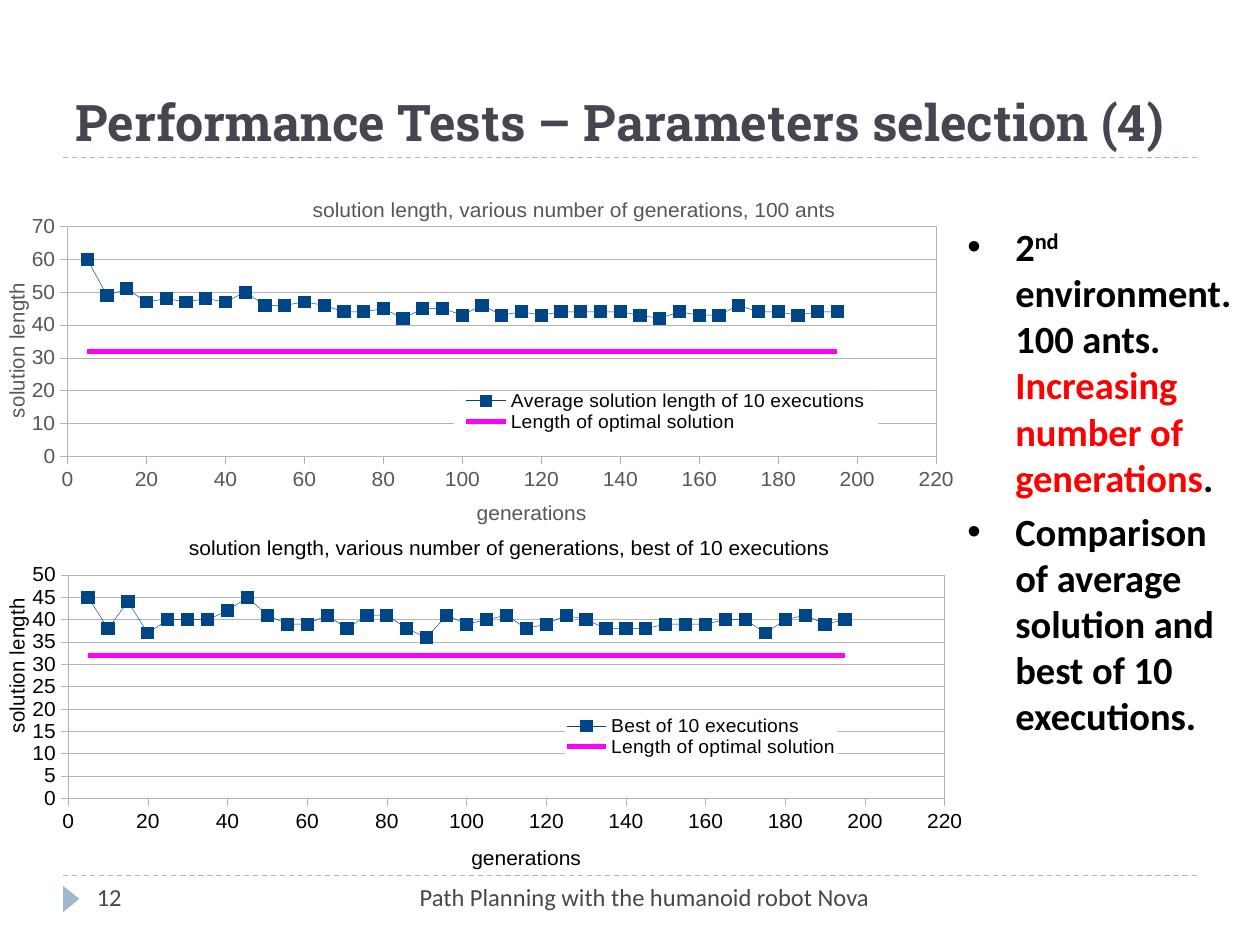
from lxml import etree
from pptx import Presentation
from pptx.chart.data import XyChartData
from pptx.dml.color import RGBColor
from pptx.enum.chart import XL_CHART_TYPE as ChartType, XL_LEGEND_POSITION as LegendSide
from pptx.enum.chart import XL_MARKER_STYLE as Marker, XL_TICK_MARK as Tick
from pptx.enum.dml import MSO_LINE_DASH_STYLE as Dash
from pptx.enum.shapes import MSO_CONNECTOR as Connector, MSO_SHAPE as Shape
from pptx.enum.text import MSO_ANCHOR as Anchor, PP_ALIGN as Align
from pptx.oxml import parse_xml
from pptx.oxml.ns import nsdecls, qn
from pptx.util import Pt

THEME = {
    "ink": "464653", "accent": "9FB8CD", "black": "000000", "red": "FF0000",
    "white": "FFFFFF", "grey": "575757", "grid": "B3B3B3",
    "data": "004586", "optimal": "FF00FF",
    "heading_font": "Roboto Slab", "body_font": "Calibri", "chart_font": "Arial",
    "heading": 28.8, "body": 22, "footer": 14, "axis": 12, "legend": 11,
}

TITLE = "Performance Tests – Parameters selection (4)"
FOOTER = "Path Planning with the humanoid robot Nova"
NUMBER = "12"
BULLETS = [
    [("2", {}), ("nd", {"raised": True}), (" environment.100 ants. ", {}),
     ("Increasing number of generations", {"color": "red"}), (".", {})],
    [("Comparison of average solution and best of 10 executions.", {})],
]

GENERATIONS = range(5, 200, 5)
OPTIMAL = 32
CHARTS = [
    {
        "title": "solution length, various number of generations, best of 10 executions",
        "series": "Best of 10 executions",
        "values": [45, 38, 44, 37, 40, 40, 40, 42, 45, 41, 39, 39, 41, 38, 41, 41, 38, 36, 41, 39,
                   40, 41, 38, 39, 41, 40, 38, 38, 38, 39, 39, 39, 40, 40, 37, 40, 41, 39, 40],
        "at": (0, 303.84, 556.56, 196.56), "color": "black", "top": 50, "step": 5,
        "plot": (0.07, 0.13, 0.9, 0.67), "legend": (0.58, 0.55, 0.28, 0.12),
        "title_at": (0.19, 0), "x_title_at": (0.48, 0.93), "y_title_at": (0, 0.2),
    },
    {
        "title": "solution length, various number of generations, 100 ants",
        "series": "Average solution length of 10 executions",
        "values": [60, 49, 51, 47, 48, 47, 48, 47, 50, 46, 46, 47, 46, 44, 44, 45, 42, 45, 45, 43,
                   46, 43, 44, 43, 44, 44, 44, 44, 43, 42, 44, 43, 43, 46, 44, 44, 43, 44, 44],
        "at": (0, 106.56, 551.52, 196.56), "color": "grey", "top": 70, "step": 10,
        "plot": (0.07, 0.12, 0.9, 0.69), "legend": (0.47, 0.61, 0.44, 0.12),
        "title_at": (0.32, 0.02), "x_title_at": (0.49, 0.93), "y_title_at": (0, 0.29),
    },
]


def rgb(name):
    return RGBColor.from_string(THEME[name])


def style(font, size, color, family="body_font", bold=False):
    font.size = Pt(THEME[size])
    font.color.rgb = rgb(color)
    font.name = THEME[family]
    font.bold = bold


def add_span(para, text, size="body", color="black", family="body_font", bold=False, raised=False):
    span = para.add_run()
    span.text = text
    style(span.font, size, color, family, bold)
    if raised:
        span.font._element.set("baseline", "30000")


def add_frame(page, at, anchor=Anchor.TOP):
    frame = page.shapes.add_textbox(*map(Pt, at)).text_frame
    frame.word_wrap = True
    frame.vertical_anchor = anchor
    return frame


def add_label(page, at, text, anchor=Anchor.TOP, align=Align.LEFT, **format):
    para = add_frame(page, at, anchor).paragraphs[0]
    para.alignment = align
    add_span(para, text, **format)


def add_bullets(page, at):
    frame = add_frame(page, at)
    for index, spans in enumerate(BULLETS):
        para = frame.add_paragraph() if index else frame.paragraphs[0]
        para.space_before = Pt(4.4)
        properties = para._p.get_or_add_pPr()
        properties.set("marL", str(Pt(27.36)))
        properties.set("indent", str(-Pt(27.36)))
        etree.SubElement(properties, qn("a:buFont")).set("typeface", THEME["chart_font"])
        etree.SubElement(properties, qn("a:buChar")).set("char", "•")
        for text, format in spans:
            add_span(para, text, bold=True, **format)


def add_rule(page, y):
    rule = page.shapes.add_connector(Connector.STRAIGHT, Pt(36), Pt(y), Pt(684), Pt(y))
    rule.line.color.rgb = rgb("accent")
    rule.line.width = Pt(0.75)
    rule.line.dash_style = Dash.DASH
    etree.SubElement(rule._element.spPr, qn("a:effectLst"))


def place(element, position, index=1, inner=False):
    for old in element.findall(qn("c:layout")):
        element.remove(old)
    target = '<c:layoutTarget val="inner"/>' if inner else ""
    modes = "".join(f'<c:{axis}Mode val="edge"/>' for axis in "xy")
    sizes = "".join(f'<c:{key} val="{value}"/>' for key, value in zip("xywh", position))
    element.insert(index, parse_xml(
        f'<c:layout {nsdecls("c")}><c:manualLayout>{target}{modes}{sizes}'
        "</c:manualLayout></c:layout>"))


def surface(fill=None, line=None):
    def solid(name):
        if not name:
            return "<a:noFill/>"
        return f'<a:solidFill><a:srgbClr val="{THEME[name]}"/></a:solidFill>'
    return parse_xml(f'<c:spPr {nsdecls("c", "a")}>{solid(fill)}'
                     f'<a:ln w="{Pt(0.25)}">{solid(line)}</a:ln></c:spPr>')


def set_title(title, text, color, position):
    para = title.text_frame.paragraphs[0]
    add_span(para, text, "axis", color, "chart_font")
    place(title._element, position)


def set_axis(axis, top, step, text, color, position, grid):
    axis.minimum_scale, axis.maximum_scale, axis.major_unit = 0, top, step
    axis.major_tick_mark, axis.minor_tick_mark = Tick.OUTSIDE, Tick.NONE
    axis.has_major_gridlines = grid
    lines = [axis.format.line]
    if grid:
        lines.append(axis.major_gridlines.format.line)
    for line in lines:
        line.color.rgb = rgb("grid")
        line.width = Pt(0.25)
    style(axis.tick_labels.font, "axis", color, "chart_font")
    set_title(axis.axis_title, text, color, position)


def set_series(series, color, width):
    series.smooth = False
    series.format.line.color.rgb = rgb(color)
    series.format.line.width = Pt(width)
    series.marker.style = Marker.NONE


def add_scatter(page, item):
    data = XyChartData()
    for name, values in ((item["series"], item["values"]),
                         ("Length of optimal solution", [OPTIMAL] * len(GENERATIONS))):
        series = data.add_series(name)
        for x, y in zip(GENERATIONS, values):
            series.add_data_point(x, y)
    chart = page.shapes.add_chart(ChartType.XY_SCATTER_LINES, *map(Pt, item["at"]), data).chart
    color = item["color"]
    style(chart.font, "axis", "black", "chart_font")
    chart.plots[0].vary_by_categories = False
    set_title(chart.chart_title, item["title"], color, item["title_at"])
    set_axis(chart.category_axis, 220, 20, "generations", color, item["x_title_at"], False)
    set_axis(chart.value_axis, item["top"], item["step"], "solution length", color,
             item["y_title_at"], True)

    measured, optimal = chart.plots[0].series
    set_series(measured, "data", 0.25)
    set_series(optimal, "optimal", 3)
    marker = measured.marker
    marker.style, marker.size = Marker.SQUARE, 7
    for paint in (marker.format.fill, marker.format.line.fill):
        paint.solid()
        paint.fore_color.rgb = rgb("data")

    chart.has_legend = True
    legend = chart.legend
    legend.position = LegendSide.RIGHT
    legend.include_in_layout = False
    style(legend.font, "legend", "black", "chart_font")
    place(legend._element, item["legend"])
    legend._element.find(qn("c:overlay")).addnext(surface("white"))

    body = chart._chartSpace.find(qn("c:chart"))
    body.addnext(surface("white"))
    plot = body.find(qn("c:plotArea"))
    place(plot, item["plot"], index=0, inner=True)
    plot.append(surface(line="grid"))


def main():
    deck = Presentation()
    deck.slide_width, deck.slide_height = Pt(720), Pt(540)
    page = deck.slides.add_slide(deck.slide_layouts[6])
    for y in (500.4, 90):
        add_rule(page, y)
    arrow = page.shapes.add_shape(Shape.ISOSCELES_TRIANGLE, Pt(33.12), Pt(509.04), Pt(15.12), Pt(9.36))
    arrow.rotation = 90
    arrow.shadow.inherit = False
    arrow.fill.solid()
    arrow.fill.fore_color.rgb = rgb("accent")
    arrow.line.fill.background()
    add_label(page, (36, 12.24, 648, 77.76), TITLE, anchor=Anchor.BOTTOM,
              size="heading", color="ink", family="heading_font", bold=True)
    add_label(page, (228.24, 500.4, 275.76, 28.8), FOOTER, align=Align.RIGHT,
              size="footer", color="ink")
    add_label(page, (48.24, 500.4, 156.24, 28.8), NUMBER, size="footer", color="ink")
    for item in CHARTS:
        add_scatter(page, item)
    add_bullets(page, (545.76, 123.84, 174.24, 371.52))
    deck.save("out.pptx")


if __name__ == "__main__":
    main()
